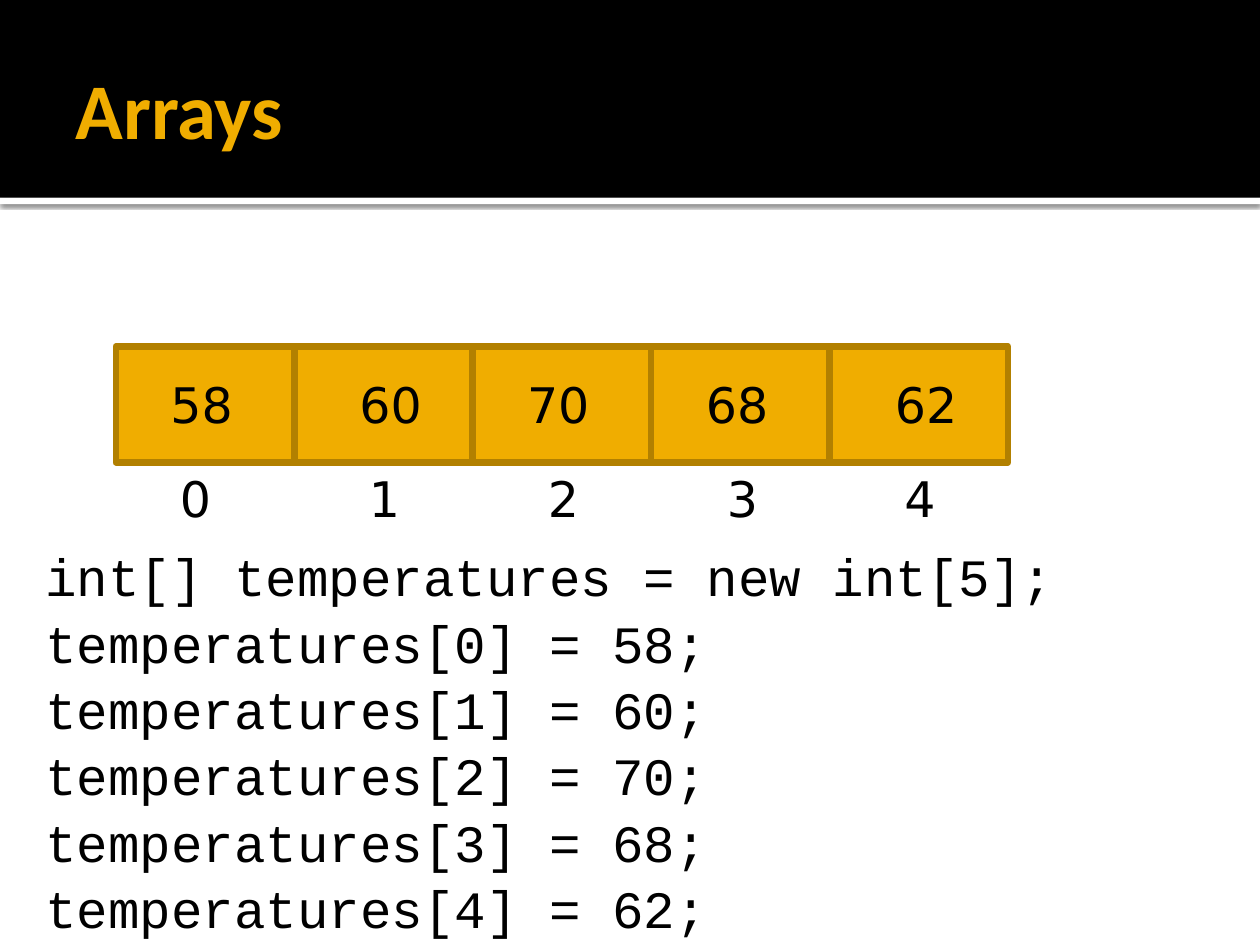
"""Build a slide that shows an array of temperatures and the code that fills it."""
import pptx
import pptx.dml.color
import pptx.enum.shapes
import pptx.enum.text
import pptx.oxml
import pptx.oxml.ns
import pptx.util

Inches = pptx.util.Inches
Pt = pptx.util.Pt
ALIGN = pptx.enum.text.PP_ALIGN
ANCHOR = pptx.enum.text.MSO_ANCHOR
AUTO_SIZE = pptx.enum.text.MSO_AUTO_SIZE

VALUES = [58, 60, 70, 68, 62]
VALUE_LEFTS = [1.25, 2.75, 4.08, 5.5, 7]
INDEX_LEFTS = [1.33, 2.83, 4.25, 5.67, 7.08]
ROW_LEFT, ROW_WIDTH = 0.92, 7.08
GOLD, DARK_GOLD, BLACK, WHITE = "F0AD00", "B28000", "000000", "FFFFFF"


def color(value):
    """Turn a hex string into a colour."""
    return pptx.dml.color.RGBColor.from_string(value)


def place(shape, left, top, width, height):
    """Move and size a shape, in inches."""
    shape.left, shape.top = Inches(left), Inches(top)
    shape.width, shape.height = Inches(width), Inches(height)


def set_margins(frame, left, top, right, bottom):
    """Set the inner margins of a text frame, in inches."""
    frame.margin_left, frame.margin_top = Inches(left), Inches(top)
    frame.margin_right, frame.margin_bottom = Inches(right), Inches(bottom)


def set_font(para, name, size, fill, bold=False):
    """Format all the text of a paragraph."""
    para.font.name = name
    para.font.size = Pt(size)
    para.font.color.rgb = color(fill)
    para.font.bold = bold


def add_rectangle(page, left, top, width, height, fill, line=None):
    """Add a flat rectangle with an optional outline."""
    box = page.shapes.add_shape(
        pptx.enum.shapes.MSO_SHAPE.RECTANGLE,
        Inches(left), Inches(top), Inches(width), Inches(height))
    box.shadow.inherit = False
    box.fill.solid()
    box.fill.fore_color.rgb = color(fill)
    if line:
        box.line.color.rgb = color(line)
        box.line.width = Pt(3.78)
    else:
        box.line.fill.background()
    return box


def add_shadow(box):
    """Give a shape a soft shadow below it."""
    effects = box.element.spPr.find(pptx.oxml.ns.qn("a:effectLst"))
    effects.append(pptx.oxml.parse_xml(
        f'<a:outerShdw {pptx.oxml.ns.nsdecls("a")} blurRad="{Pt(2.5)}" '
        f'dist="{Pt(0.8)}" dir="5400000" algn="t" rotWithShape="0">'
        f'<a:srgbClr val="{BLACK}"><a:alpha val="60000"/></a:srgbClr>'
        '</a:outerShdw>'))


def add_header(page, text):
    """Add the title on a black band with a white shadowed edge."""
    title = page.shapes.title
    edge = add_rectangle(page, 0, 1.57, 10, 0.05, WHITE)
    add_shadow(edge)
    band = add_rectangle(page, 0, 0, 10, 1.57, BLACK)
    for box in (edge, band):
        title.element.addprevious(box.element)
    place(title, 0.5, 0.17, 9, 1.37)
    frame = title.text_frame
    frame.text = text
    frame.vertical_anchor = ANCHOR.MIDDLE
    set_margins(frame, 0.1, 0.05, 0.05, 0.05)
    frame.paragraphs[0].alignment = ALIGN.LEFT
    set_font(frame.paragraphs[0], "Calibri", 45, GOLD, bold=True)


def add_code(page, lines):
    """Fill the body placeholder with lines of code."""
    body = page.placeholders[1]
    place(body, 0.17, 4.22, 9.67, 3.2)
    frame = body.text_frame
    frame.text = "\n".join(lines)
    frame.auto_size = AUTO_SIZE.NONE
    frame.vertical_anchor = ANCHOR.TOP
    set_margins(frame, 0.06, 0.1, 0.1, 0.05)
    for number, para in enumerate(frame.paragraphs):
        para.space_before = Pt(1.9 if number else 0)
        properties = para._p.get_or_add_pPr()
        properties.set("marL", str(Inches(0.48)))
        properties.set("indent", str(Inches(-0.35)))
        properties.append(pptx.oxml.parse_xml(
            f'<a:buNone {pptx.oxml.ns.nsdecls("a")}/>'))
        set_font(para, "Courier New", 30, BLACK)


def add_label(page, text, left, top, width, alignment=ALIGN.LEFT):
    """Add a one-line number label."""
    box = page.shapes.add_textbox(
        Inches(left), Inches(top), Inches(width), Inches(0.57))
    frame = box.text_frame
    frame.text = text
    frame.word_wrap = False
    frame.auto_size = AUTO_SIZE.SHAPE_TO_FIT_TEXT
    frame.paragraphs[0].alignment = alignment
    set_font(frame.paragraphs[0], "DejaVu Sans", 28, BLACK)


def add_array(page):
    """Draw the array cells with their indexes and values."""
    cell_width = ROW_WIDTH / len(VALUES)
    for index in range(len(VALUES)):
        add_rectangle(page, ROW_LEFT + index * cell_width, 2.75,
                      cell_width, 0.92, GOLD, DARK_GOLD)
    for index, left in enumerate(INDEX_LEFTS):
        add_label(page, str(index), left, 3.67, 0.45)
    for value, left in zip(VALUES, VALUE_LEFTS):
        add_label(page, str(value), left, 2.92, 0.7, ALIGN.CENTER)


def main():
    """Build and save the deck."""
    deck = pptx.Presentation()
    deck.slide_width, deck.slide_height = Inches(10), Inches(7.5)
    page = deck.slides.add_slide(deck.slide_layouts[1])
    page.background.fill.solid()
    page.background.fill.fore_color.rgb = color(WHITE)
    add_header(page, "Arrays")
    add_code(page, ["int[] temperatures = new int[5];"] + [
        f"temperatures[{index}] = {value};"
        for index, value in enumerate(VALUES)])
    add_array(page)
    deck.save("out.pptx")


if __name__ == "__main__":
    main()
